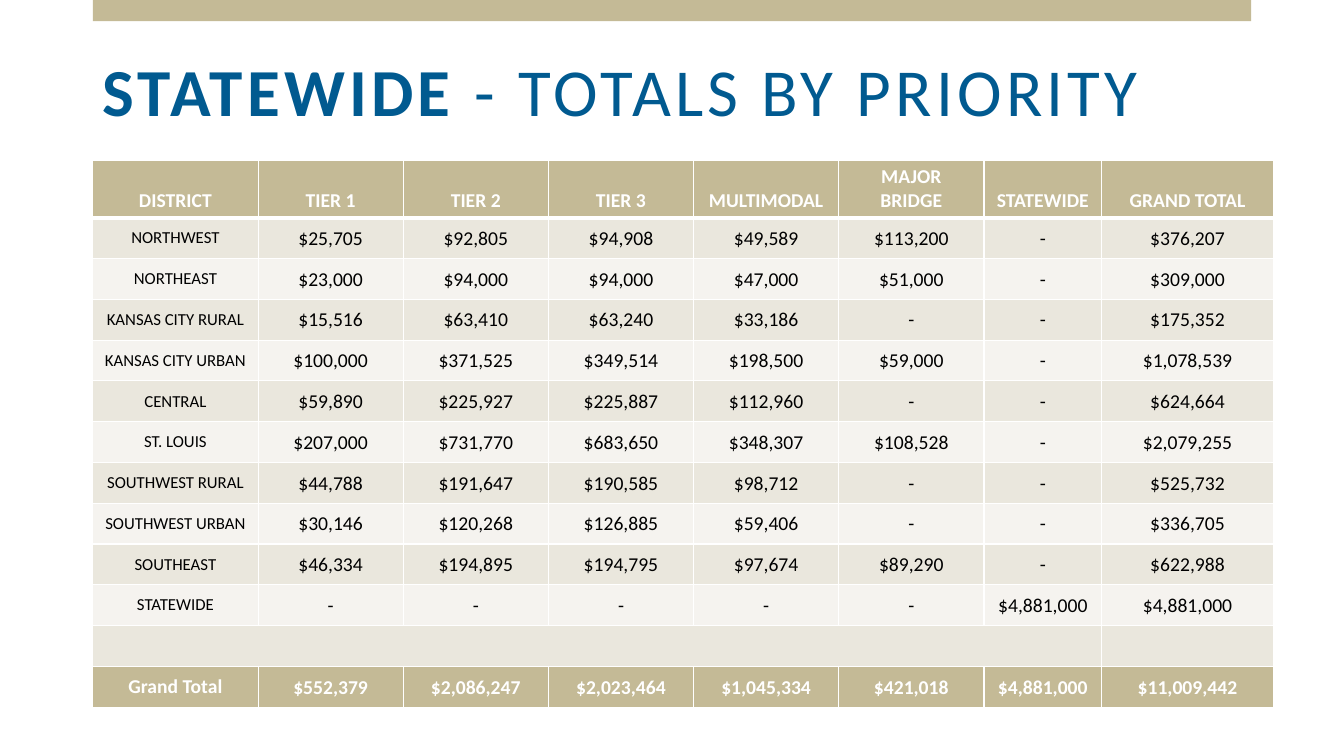
from dataclasses import dataclass

from lxml import etree
from pptx import Presentation
from pptx import util as u
from pptx.dml import color
from pptx.enum import shapes, text
from pptx.oxml import ns

FONT = "Calibri"
TAN, BLUE, WHITE, BLACK = "C4BA96", "015A90", "FFFFFF", "000000"
BANDS = ("EAE7DD", "F5F3EF")
LEFT, TABLE_TOP, TABLE_HEIGHT, HEADER_HEIGHT = 0.92, 1.59, 5.43, 0.57
WIDTHS = (1.64, 1.44, 1.44, 1.44, 1.44, 1.44, 1.17, 1.7)


@dataclass(frozen=True)
class Row:
    label: str
    values: str
    kind: str = "body"


ROWS = (
    Row("DISTRICT", "TIER 1|TIER 2|TIER 3|MULTIMODAL|MAJOR BRIDGE|STATEWIDE|GRAND TOTAL", "header"),
    Row("NORTHWEST", "$25,705|$92,805|$94,908|$49,589|$113,200|-|$376,207"),
    Row("NORTHEAST", "$23,000|$94,000|$94,000|$47,000|$51,000|-|$309,000"),
    Row("KANSAS CITY RURAL", "$15,516|$63,410|$63,240|$33,186|-|-|$175,352"),
    Row("KANSAS CITY URBAN", "$100,000|$371,525|$349,514|$198,500|$59,000|-|$1,078,539"),
    Row("CENTRAL", "$59,890|$225,927|$225,887|$112,960|-|-|$624,664"),
    Row("ST. LOUIS", "$207,000|$731,770|$683,650|$348,307|$108,528|-|$2,079,255"),
    Row("SOUTHWEST RURAL", "$44,788|$191,647|$190,585|$98,712|-|-|$525,732"),
    Row("SOUTHWEST URBAN", "$30,146|$120,268|$126,885|$59,406|-|-|$336,705"),
    Row("SOUTHEAST", "$46,334|$194,895|$194,795|$97,674|$89,290|-|$622,988"),
    Row("STATEWIDE", "-|-|-|-|-|$4,881,000|$4,881,000"),
    Row("", "||||||", "spacer"),
    Row("Grand Total", "$552,379|$2,086,247|$2,023,464|$1,045,334|$421,018|$4,881,000|$11,009,442", "total"),
)


def rgb(value: str) -> color.RGBColor:
    return color.RGBColor.from_string(value)


def add_text(p, words: str, *, size: float, fill: str, bold: bool = False, spacing: float = 0) -> None:
    r = p.add_run()
    r.text = words
    r.font.name = FONT
    r.font.size = u.Pt(size)
    r.font.bold = bold
    r.font.color.rgb = rgb(fill)
    if spacing:
        r._r.get_or_add_rPr().set("spc", str(int(spacing * 100)))


def add_borders(cell, bottom: float) -> None:
    tc_pr = cell._tc.get_or_add_tcPr()
    for side, width in (("L", 1), ("R", 1), ("T", 1), ("B", bottom)):
        ln = etree.SubElement(tc_pr, ns.qn(f"a:ln{side}"), w=str(u.Pt(width)))
        fill = etree.SubElement(ln, ns.qn("a:solidFill"))
        etree.SubElement(fill, ns.qn("a:srgbClr"), val=WHITE)


def add_bar(s) -> None:
    sp = s.shapes.add_shape(
        shapes.MSO_SHAPE.RECTANGLE, u.Inches(LEFT), 0, u.Inches(11.49), u.Inches(0.21))
    sp.shadow.inherit = False
    sp.fill.solid()
    sp.fill.fore_color.rgb = rgb(TAN)
    sp.line.fill.background()


def add_title(s) -> None:
    sp = s.shapes.add_textbox(u.Inches(LEFT), u.Inches(0.23), u.Inches(11.49), u.Inches(1.43))
    tf = sp.text_frame
    tf.word_wrap = True
    tf.vertical_anchor = text.MSO_ANCHOR.MIDDLE
    p = tf.paragraphs[0]
    p.line_spacing = 0.9
    add_text(p, "STATEWIDE", size=48, fill=BLUE, bold=True, spacing=3)
    add_text(p, " - TOTALS BY PRIORITY", size=48, fill=BLUE, spacing=3)


def fill_cell(cell, words: str, row: Row, band: str, is_label: bool) -> None:
    strong = row.kind in ("header", "total")
    add_borders(cell, 3 if row.kind == "header" else 1)
    cell.fill.solid()
    cell.fill.fore_color.rgb = rgb(TAN if strong else band)
    if not words:
        return
    cell.vertical_anchor = (
        text.MSO_ANCHOR.BOTTOM if row.kind == "header" else text.MSO_ANCHOR.MIDDLE)
    if not is_label and row.kind != "header":
        cell.margin_left = cell.margin_right = cell.margin_top = u.Inches(0.01)
        cell.margin_bottom = 0
    p = cell.text_frame.paragraphs[0]
    p.alignment = text.PP_ALIGN.CENTER
    add_text(p, words, size=12 if is_label and not strong else 14,
             fill=WHITE if strong else BLACK, bold=strong)


def add_totals(s) -> None:
    frame = s.shapes.add_table(
        len(ROWS), len(WIDTHS), u.Inches(LEFT), u.Inches(TABLE_TOP),
        u.Inches(sum(WIDTHS)), u.Inches(TABLE_HEIGHT))
    table = frame.table
    table.first_row = table.horz_banding = False
    for column, width in zip(table.columns, WIDTHS):
        column.width = u.Inches(width)
    row_height = (TABLE_HEIGHT - HEADER_HEIGHT) / (len(ROWS) - 1)
    for i, row in enumerate(ROWS):
        table.rows[i].height = u.Inches(HEADER_HEIGHT if row.kind == "header" else row_height)
        for j, words in enumerate((row.label, *row.values.split("|"))):
            fill_cell(table.cell(i, j), words, row, BANDS[(i - 1) % 2], j == 0)
        if row.kind == "spacer":
            table.cell(i, 0).merge(table.cell(i, len(WIDTHS) - 2))


def main() -> None:
    prs = Presentation()
    prs.slide_width, prs.slide_height = u.Inches(13.33), u.Inches(7.5)
    s = prs.slides.add_slide(prs.slide_layouts[6])
    add_bar(s)
    add_title(s)
    add_totals(s)
    prs.save("out.pptx")


if __name__ == "__main__":
    main()
